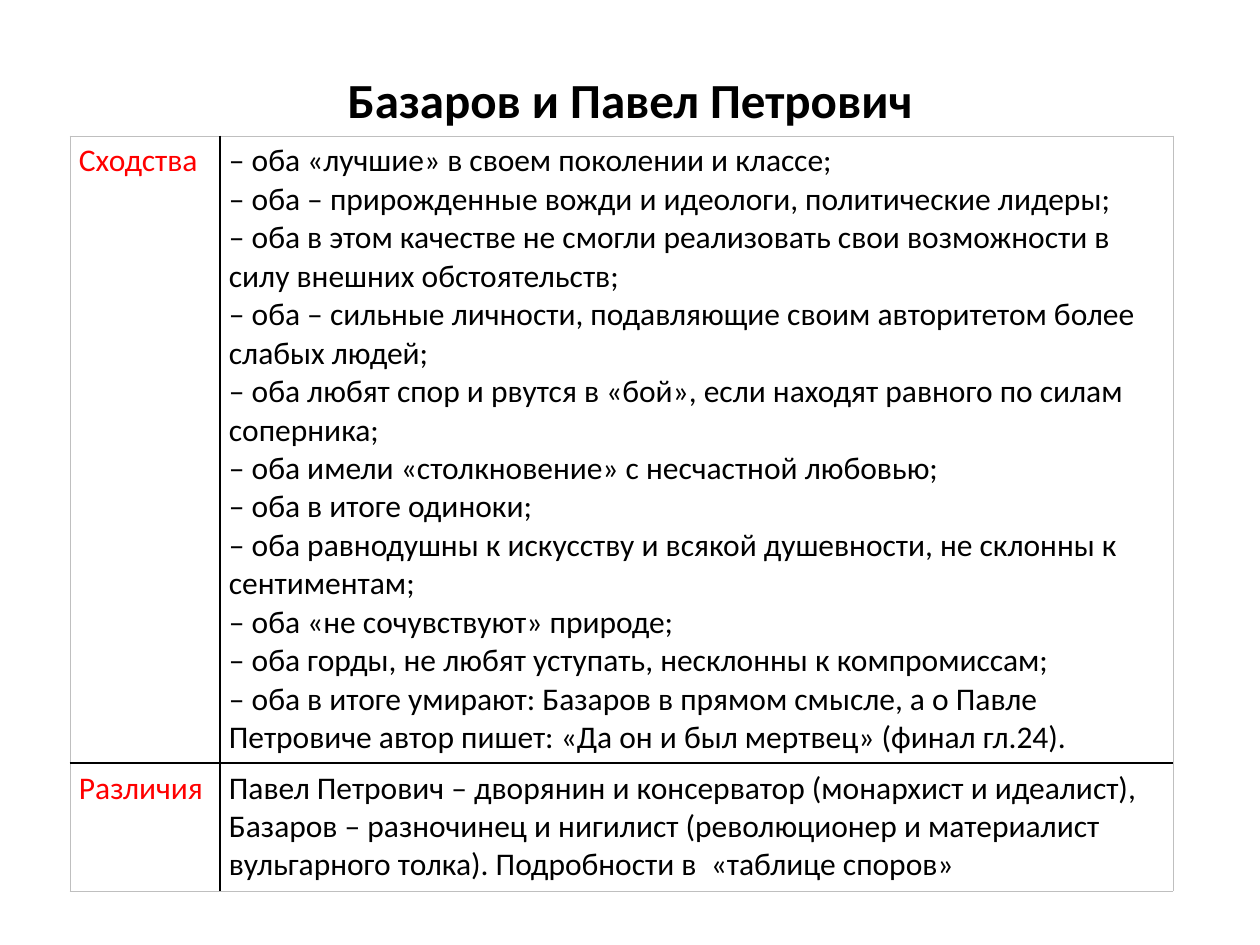
import pptx
import pptx.dml.color
import pptx.enum.text
import pptx.oxml
import pptx.oxml.ns
import pptx.util

PX = 914400 / 126
THEME = {
    "font": "Calibri", "title_size": 28, "body_size": 18,
    "text": "000000", "label": "FF0000", "paper": "FFFFFF",
    "inner_line": ("000000", 1), "outer_line": ("BFBFBF", 0.5),
}


def px(length):
    return pptx.util.Emu(round(length * PX))


def format_text(frame, size, color, bold, align):
    for paragraph in frame.paragraphs:
        paragraph.alignment = align
        font = paragraph.runs[0].font
        formats = {"name": THEME["font"], "size": pptx.util.Pt(size), "bold": bold}
        for attribute, value in formats.items():
            setattr(font, attribute, value)
        font.color.rgb = pptx.dml.color.RGBColor.from_string(color)


similarities = [
    "– оба «лучшие» в своем поколении и классе;",
    "– оба – прирожденные вожди и идеологи, политические лидеры;",
    "– оба в этом качестве не смогли реализовать свои возможности в силу внешних обстоятельств;",
    "– оба – сильные личности, подавляющие своим авторитетом более слабых людей;",
    "– оба любят спор и рвутся в «бой», если находят равного по силам соперника;",
    "– оба имели «столкновение» с несчастной любовью;",
    "– оба в итоге одиноки;",
    "– оба равнодушны к искусству и всякой душевности, не склонны к сентиментам;",
    "– оба «не сочувствуют» природе;",
    "– оба горды, не любят уступать, несклонны к компромиссам;",
    "– оба в итоге умирают: Базаров в прямом смысле, а о Павле Петровиче автор пишет: "
    "«Да он и был мертвец» (финал гл.24).",
]
differences = [
    "Павел Петрович – дворянин и консерватор (монархист и идеалист), "
    "Базаров – разночинец и нигилист (революционер и материалист вульгарного толка). "
    "Подробности в  «таблице споров»",
]
comparison_rows = [("Сходства", similarities), ("Различия", differences)]
column_widths = [150, 953]
row_heights = [627, 128]

presentation = pptx.Presentation()
presentation.slide_width, presentation.slide_height = px(1260), px(945)
slide = presentation.slides.add_slide(presentation.slide_layouts[5])

heading = slide.shapes.title
heading_box = {"left": 87, "top": 50, "width": 1086, "height": 97}
for attribute, value in heading_box.items():
    setattr(heading, attribute, px(value))
heading.text_frame.text = "Базаров и Павел Петрович"
heading.text_frame.vertical_anchor = pptx.enum.text.MSO_ANCHOR.MIDDLE
format_text(heading.text_frame, THEME["title_size"], THEME["text"], True,
            pptx.enum.text.PP_ALIGN.CENTER)

comparison = slide.shapes.add_table(
    2, 2, px(70), px(136), px(sum(column_widths)), px(sum(row_heights))).table
comparison.first_row = comparison.horz_banding = False
for column, width in zip(comparison.columns, column_widths):
    column.width = px(width)
for row, height in zip(comparison.rows, row_heights):
    row.height = px(height)

margins = {"margin_left": 9, "margin_right": 9, "margin_top": 6, "margin_bottom": 6}
for row_index, (label, statements) in enumerate(comparison_rows):
    contents = [(label, THEME["label"]), ("\n".join(statements), THEME["text"])]
    for column_index, (content, color) in enumerate(contents):
        cell = comparison.cell(row_index, column_index)
        cell.text = content
        for attribute, value in margins.items():
            setattr(cell, attribute, px(value))
        format_text(cell.text_frame, THEME["body_size"], color, False,
                    pptx.enum.text.PP_ALIGN.LEFT)
        inner_sides = {"lnR" if column_index == 0 else "lnL",
                       "lnB" if row_index == 0 else "lnT"}
        for side in ("lnL", "lnR", "lnT", "lnB"):
            line_color, line_width = THEME["inner_line" if side in inner_sides else "outer_line"]
            cell._tc.get_or_add_tcPr().append(pptx.oxml.parse_xml(
                f'<a:{side} {pptx.oxml.ns.nsdecls("a")} w="{pptx.util.Pt(line_width)}">'
                f'<a:solidFill><a:srgbClr val="{line_color}"/></a:solidFill></a:{side}>'))
        cell.fill.solid()
        cell.fill.fore_color.rgb = pptx.dml.color.RGBColor.from_string(THEME["paper"])

presentation.save("out.pptx")
